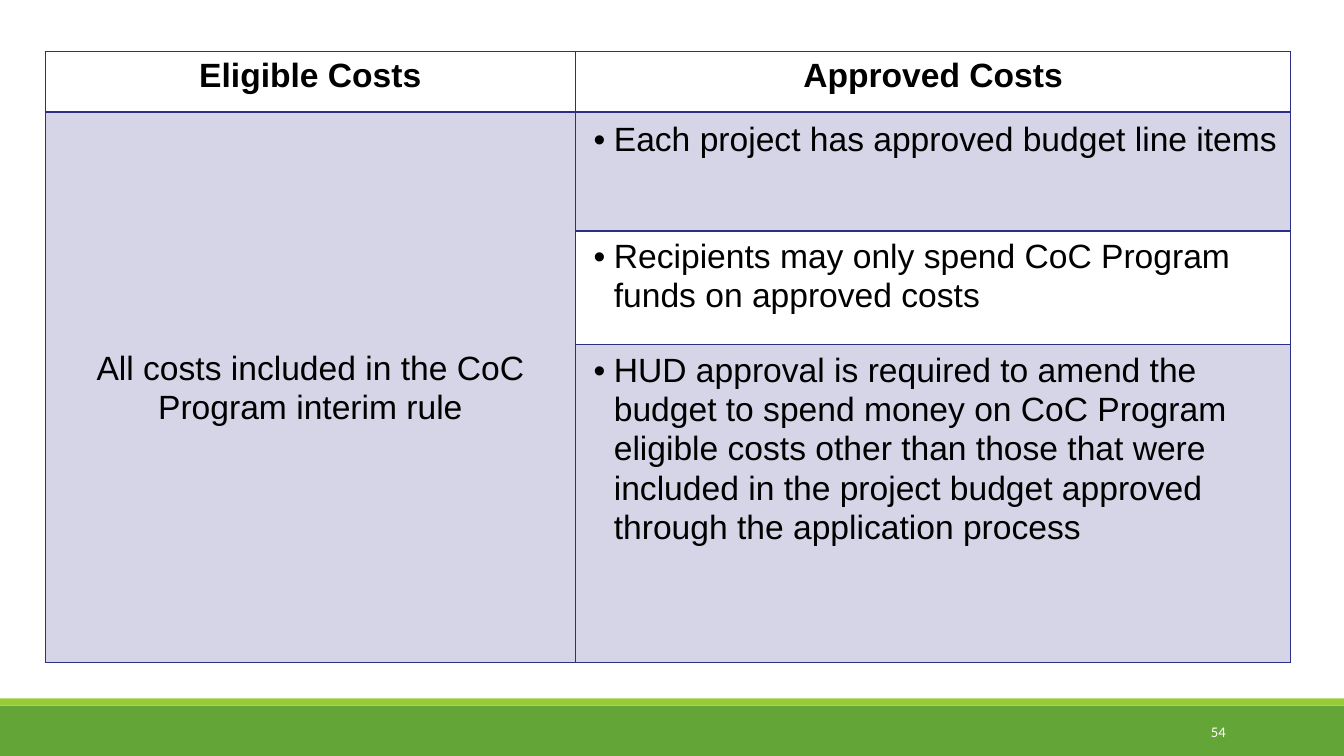
from dataclasses import dataclass

from lxml.etree import SubElement
from pptx import Presentation
from pptx.dml.color import RGBColor
from pptx.enum.shapes import MSO_SHAPE
from pptx.enum.text import MSO_ANCHOR, PP_ALIGN
from pptx.oxml import parse_xml
from pptx.oxml.ns import nsdecls, qn
from pptx.slide import Slide
from pptx.table import _Cell
from pptx.text.text import _Paragraph
from pptx.util import Cm, Pt


@dataclass(frozen=True)
class Theme:
    font: str = "Arial"
    number_font: str = "Calibri"
    text_size: float = 24
    number_size: float = 10.5
    text: str = "000000"
    number: str = "FFFFFF"
    navy: str = "2D2D8A"
    tint_percent: int = 20
    green: str = "63A537"
    lime: str = "99CB38"


@dataclass(frozen=True)
class Band:
    top: float
    height: float
    color: str


@dataclass(frozen=True)
class CostCell:
    row: int
    column: int
    text: str
    bold: bool = False
    bullet: bool = False
    middle: bool = False
    spacing: float = 1.0


THEME = Theme()
SLIDE_WIDTH, SLIDE_HEIGHT = 33.87, 19.05
COLUMN_WIDTHS = (13.36, 18.03)
ROW_HEIGHTS = (1.52, 3.0, 2.87, 8.0)
TINTED_CELLS = {(1, 0), (2, 0), (3, 0), (1, 1), (3, 1)}

BANDS = (
    Band(17.78, 1.27, THEME.green),
    Band(17.6, 0.18, THEME.lime),
)
COST_CELLS = (
    CostCell(0, 0, "Eligible Costs", bold=True),
    CostCell(0, 1, "Approved Costs", bold=True),
    CostCell(1, 0, "All costs included in the CoC Program interim rule",
             middle=True, spacing=1.05),
    CostCell(1, 1, "Each project has approved budget line items",
             bullet=True, spacing=1.1),
    CostCell(2, 1, "Recipients may only spend CoC Program funds on approved costs",
             bullet=True, spacing=1.05),
    CostCell(3, 1, "HUD approval is required to amend the budget to spend money on "
             "CoC Program eligible costs other than those that were included in the "
             "project budget approved through the application process",
             bullet=True, spacing=1.05),
)


def format_text(para: _Paragraph, font: str, size: float, color: str,
                bold: bool = False) -> None:
    for span in para.runs:
        span.font.name = font
        span.font.size = Pt(size)
        span.font.bold = bold
        span.font.color.rgb = RGBColor.from_string(color)


def add_bullet(para: _Paragraph) -> None:
    properties = para._p.get_or_add_pPr()
    properties.set("marL", str(Cm(0.64)))
    properties.set("indent", str(Cm(-0.51)))
    SubElement(properties, qn("a:buFont"), typeface=THEME.font)
    SubElement(properties, qn("a:buChar"), char="•")


def style_cell(cell: _Cell, row: int, column: int) -> None:
    """Set margins, fill and borders; the rule under the header is heavier."""
    cell.margin_left = cell.margin_right = Cm(0.33)
    cell.margin_top = cell.margin_bottom = Cm(0.13)
    if (row, column) in TINTED_CELLS:
        cell.fill.solid()
        cell.fill.fore_color.rgb = RGBColor.from_string(THEME.navy)
        tint = cell._tc.tcPr.find(".//" + qn("a:srgbClr"))
        SubElement(tint, qn("a:alpha"), val=str(THEME.tint_percent * 1000))
    else:
        cell.fill.background()

    widths = {"lnL": 1, "lnR": 1, "lnT": 2 if row == 1 else 1,
              "lnB": 2 if row == 0 else 1}
    for index, (side, width) in enumerate(widths.items()):
        border = parse_xml(
            f'<a:{side} {nsdecls("a")} w="{Pt(width)}"><a:solidFill>'
            f'<a:srgbClr val="{THEME.navy}"/></a:solidFill></a:{side}>')
        cell._tc.tcPr.insert(index, border)


def add_band(slide: Slide, band: Band) -> None:
    shape = slide.shapes.add_shape(MSO_SHAPE.RECTANGLE, 0, Cm(band.top),
                                   Cm(SLIDE_WIDTH), Cm(band.height))
    shape.shadow.inherit = False
    shape.fill.solid()
    shape.fill.fore_color.rgb = RGBColor.from_string(band.color)
    shape.line.fill.background()


def add_cost_table(slide: Slide) -> None:
    table = slide.shapes.add_table(
        len(ROW_HEIGHTS), len(COLUMN_WIDTHS), Cm(1.14), Cm(1.3),
        Cm(sum(COLUMN_WIDTHS)), Cm(sum(ROW_HEIGHTS))).table
    table.first_row = table.horz_banding = False
    for column, width in zip(table.columns, COLUMN_WIDTHS):
        column.width = Cm(width)
    for row, height in zip(table.rows, ROW_HEIGHTS):
        row.height = Cm(height)
    for row in range(len(ROW_HEIGHTS)):
        for column in range(len(COLUMN_WIDTHS)):
            style_cell(table.cell(row, column), row, column)
    table.cell(1, 0).merge(table.cell(3, 0))

    for content in COST_CELLS:
        cell = table.cell(content.row, content.column)
        cell.vertical_anchor = MSO_ANCHOR.MIDDLE if content.middle else MSO_ANCHOR.TOP
        cell.text_frame.text = content.text
        para = cell.text_frame.paragraphs[0]
        para.alignment = PP_ALIGN.LEFT if content.bullet else PP_ALIGN.CENTER
        para.line_spacing = content.spacing
        format_text(para, THEME.font, THEME.text_size, THEME.text, content.bold)
        if content.bullet:
            add_bullet(para)


def add_page_number(slide: Slide, number: str) -> None:
    box = slide.shapes.add_textbox(Cm(27.51), Cm(17.93), Cm(3.63), Cm(1.02))
    box.text_frame.word_wrap = True
    box.text_frame.vertical_anchor = MSO_ANCHOR.MIDDLE
    box.text_frame.text = number
    para = box.text_frame.paragraphs[0]
    para.alignment = PP_ALIGN.RIGHT
    format_text(para, THEME.number_font, THEME.number_size, THEME.number)


def main() -> None:
    deck = Presentation()
    deck.slide_width, deck.slide_height = Cm(SLIDE_WIDTH), Cm(SLIDE_HEIGHT)
    slide = deck.slides.add_slide(deck.slide_layouts.get_by_name("Blank"))

    # Footer bands
    for band in BANDS:
        add_band(slide, band)

    # Cost comparison and page number
    add_cost_table(slide)
    add_page_number(slide, "54")
    deck.save("out.pptx")


if __name__ == "__main__":
    main()
